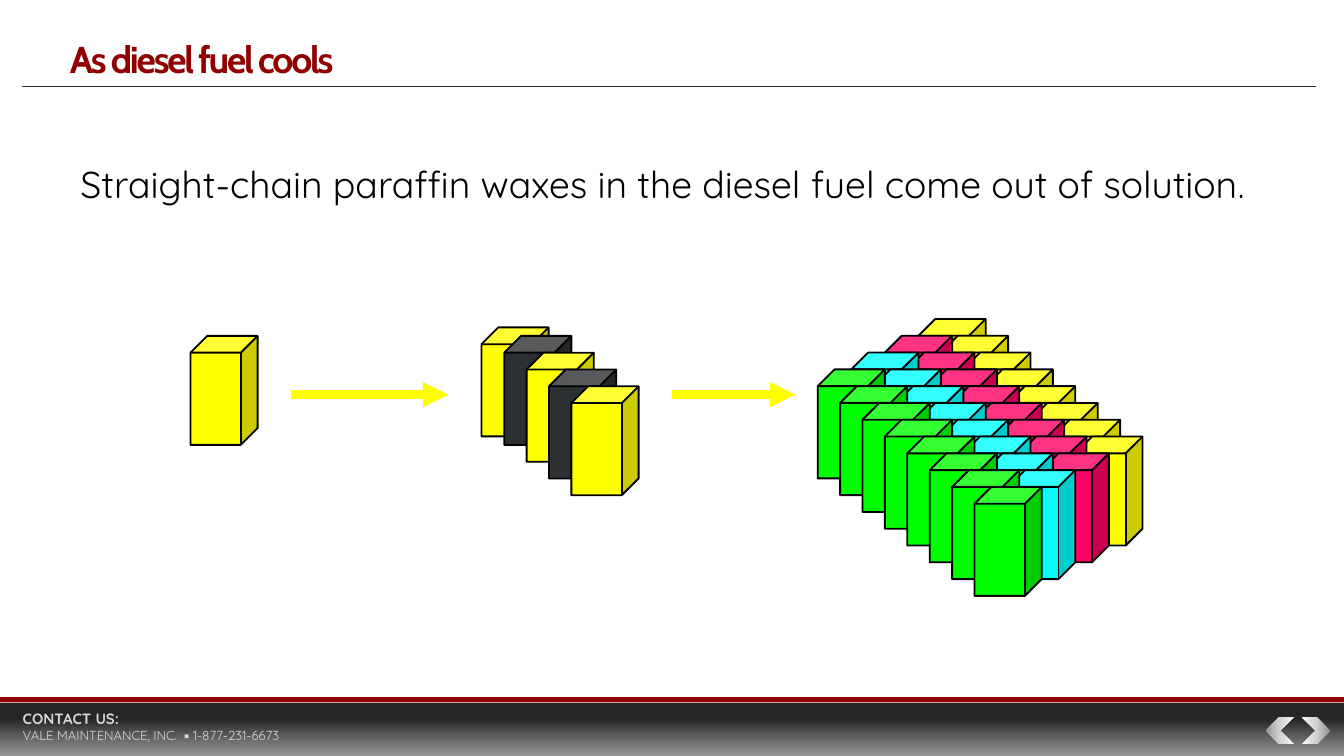
"""Build the slide on paraffin waxes leaving cooling diesel fuel."""
import pptx
import pptx.util
import pptx.dml.color
import pptx.enum.shapes
import pptx.enum.text
import pptx.oxml.ns
import lxml.etree

Cm, Pt = pptx.util.Cm, pptx.util.Pt
RGBColor = pptx.dml.color.RGBColor
MSO_SHAPE = pptx.enum.shapes.MSO_SHAPE
MSO_ANCHOR = pptx.enum.text.MSO_ANCHOR
qn = pptx.oxml.ns.qn

DARK_RED = RGBColor(0x90, 0x00, 0x00)
BLACK = RGBColor(0x00, 0x00, 0x00)
RULE_GREY = RGBColor(0x2C, 0x2F, 0x31)
TEXT_GREY = RGBColor(0xD9, 0xD9, 0xD9)
YELLOW = RGBColor(0xFF, 0xFF, 0x00)
CHARCOAL = RGBColor(0x2D, 0x30, 0x32)
PINK = RGBColor(0xFF, 0x00, 0x66)
CYAN = RGBColor(0x00, 0xFF, 0xFF)
GREEN = RGBColor(0x00, 0xFF, 0x00)
BAR_STOPS = [(30, "262626"), (83, "7E7E7E"), (100, "969696")]
CHEVRON_STOPS = [(0, "939393"), (50, "D1D1D1"), (100, "F8F8F8")]

CUBE_W, CUBE_H = 1.27, 2.06
STEP_X, STEP_Y = CUBE_W / 3, CUBE_W / 4


class Deck:
    """Holds the fonts and the current slide, and draws each kind of element."""

    title_font = "Cabin"
    body_font = "Quicksand"

    def __init__(self, prs):
        self.s = prs.slides.add_slide(prs.slide_layouts[5])

    def run(self, p, text, color, **fmt):
        r = p.add_run()
        r.text = text
        r.font.color.rgb = color
        for name, value in {"name": self.body_font, **fmt}.items():
            setattr(r.font, name, value)
        return r

    def title(self, text, x, y, w, h):
        sp = self.s.shapes.title
        sp.left, sp.top, sp.width, sp.height = Cm(x), Cm(y), Cm(w), Cm(h)
        tf = sp.text_frame
        fmt = {"margin_left": Cm(0.25), "margin_right": Cm(0.25),
               "margin_top": Cm(0.1), "margin_bottom": Cm(0.1),
               "vertical_anchor": MSO_ANCHOR.BOTTOM, "word_wrap": True,
               "auto_size": pptx.enum.text.MSO_AUTO_SIZE.NONE}
        for name, value in fmt.items():
            setattr(tf, name, value)
        p = tf.paragraphs[0]
        p.alignment = pptx.enum.text.PP_ALIGN.LEFT
        r = self.run(p, text, DARK_RED, name=self.title_font, size=Pt(20), bold=True)
        r.font._element.set("spc", "-120")

    def text(self, paragraphs, x, y, w, h, color, **frame):
        tf = self.s.shapes.add_textbox(Cm(x), Cm(y), Cm(w), Cm(h)).text_frame
        for name, value in frame.items():
            setattr(tf, name, value)
        for i, runs in enumerate(paragraphs):
            p = tf.add_paragraph() if i else tf.paragraphs[0]
            for text, size, bold in runs:
                self.run(p, text, color, size=Pt(size), bold=bold)

    def shape(self, kind, x, y, w, h, color=None, outline=None):
        sp = self.s.shapes.add_shape(kind, Cm(x), Cm(y), Cm(w), Cm(h))
        sp.shadow.inherit = False
        if color is not None:
            sp.fill.solid()
            sp.fill.fore_color.rgb = color
        if outline is None:
            sp.line.fill.background()
        else:
            sp.line.color.rgb = outline
            sp.line.width = Pt(1)
        return sp

    def gradient(self, kind, x, y, w, h, stops, angle, flip=False):
        sp = self.shape(kind, x, y, w, h)
        sp.fill.gradient()
        sp.fill.gradient_angle = angle
        gs_list = sp._element.spPr.find(qn("a:gradFill")).find(qn("a:gsLst"))
        for gs in list(gs_list):
            gs_list.remove(gs)
        for pos, color in stops:
            gs = lxml.etree.SubElement(gs_list, qn("a:gs"), pos=str(pos * 1000))
            lxml.etree.SubElement(gs, qn("a:srgbClr"), val=color)
        if flip:
            sp._element.spPr.find(qn("a:xfrm")).set("flipH", "1")

    def cubes(self, x, y, colors):
        for i, color in enumerate(colors):
            self.shape(MSO_SHAPE.CUBE, x + i * STEP_X, y + i * STEP_Y,
                       CUBE_W, CUBE_H, color, BLACK)

    def line(self, x1, x2, y, color, width, arrow=False):
        c = self.s.shapes.add_connector(pptx.enum.shapes.MSO_CONNECTOR.STRAIGHT,
                                        Cm(x1), Cm(y), Cm(x2), Cm(y))
        c.line.color.rgb = color
        c.line.width = Pt(width)
        if arrow:
            ln = c._element.spPr.find(qn("a:ln"))
            lxml.etree.SubElement(ln, qn("a:tailEnd"), type="triangle")
        lxml.etree.SubElement(c._element.spPr, qn("a:effectLst"))


def main():
    prs = pptx.Presentation()
    prs.slide_width, prs.slide_height = Cm(25.4), Cm(14.29)
    deck = Deck(prs)

    deck.shape(MSO_SHAPE.RECTANGLE, 0, 13.18, 25.4, 0.1, DARK_RED)
    deck.gradient(MSO_SHAPE.RECTANGLE, 0, 13.28, 25.4, 1.01, BAR_STOPS, 270)
    deck.line(0.42, 24.87, 1.63, RULE_GREY, 0.75)
    for x, flip in [(24.61, False), (23.92, True)]:
        deck.gradient(MSO_SHAPE.CHEVRON, x, 13.56, 0.53, 0.51, CHEVRON_STOPS, 180, flip)
    deck.text([[("CONTACT US:", 8, True)],
               [("VALE MAINTENANCE, INC.  ▪ 1-877-231-6673", 7, False)]],
              0.18, 13.26, 8.69, 0.91, TEXT_GREY,
              word_wrap=True, vertical_anchor=MSO_ANCHOR.BOTTOM)

    deck.title("As diesel fuel cools", 1.07, 0.08, 23.85, 1.55)
    deck.text([[("Straight-chain paraffin waxes in the diesel fuel come out of solution", 20, False),
                (".", 18, False)]],
              1.27, 2.92, 23.75, 1.12, BLACK, word_wrap=False,
              auto_size=pptx.enum.text.MSO_AUTO_SIZE.SHAPE_TO_FIT_TEXT)

    deck.cubes(3.6, 6.35, [YELLOW])
    deck.cubes(9.1, 6.19, [YELLOW])
    deck.cubes(9.53, 6.35, [CHARCOAL, YELLOW] * 2)
    for row, color in enumerate([YELLOW, PINK, CYAN, GREEN]):
        deck.cubes(17.36 - row * CUBE_W / 2, 6.03 + row * STEP_Y, [color] * 8)
    for x1, x2 in [(5.5, 8.47), (12.7, 15.03)]:
        deck.line(x1, x2, 7.46, YELLOW, 4.5, arrow=True)

    prs.save("out.pptx")


if __name__ == "__main__":
    main()
